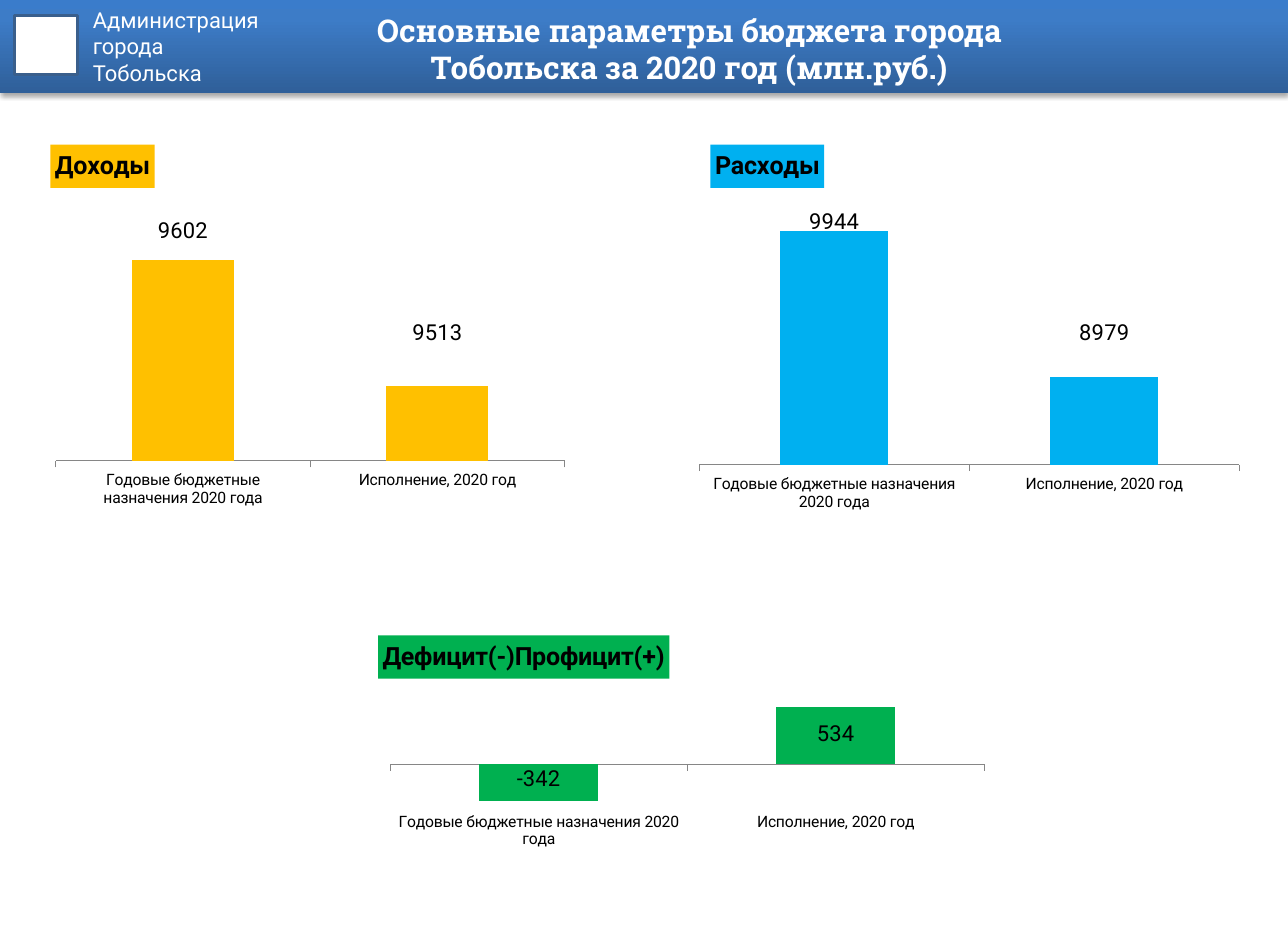
from copy import deepcopy

from lxml.etree import SubElement
from pptx import Presentation
from pptx.chart.data import CategoryChartData
from pptx.dml.color import RGBColor
from pptx.enum.chart import XL_CHART_TYPE, XL_LABEL_POSITION, XL_TICK_LABEL_POSITION, XL_TICK_MARK
from pptx.enum.shapes import MSO_SHAPE
from pptx.enum.text import MSO_ANCHOR, PP_ALIGN
from pptx.oxml import parse_xml
from pptx.oxml.ns import nsdecls, qn
from pptx.util import Cm, Pt

WHITE = RGBColor(0xFF, 0xFF, 0xFF)
BLACK = RGBColor(0, 0, 0)
BAND_STOPS = [(0, RGBColor(0x2F, 0x5F, 0x99)),
              (0.8, RGBColor(0x3D, 0x7C, 0xC7)),
              (1, RGBColor(0x3A, 0x7C, 0xCB))]
EMBLEM_LINE = RGBColor(0x3A, 0x5F, 0x8C)
AXIS_GREY = RGBColor(0x86, 0x86, 0x86)
INCOME_GOLD = RGBColor(0xFF, 0xC0, 0x00)
SPENDING_BLUE = RGBColor(0x00, 0xB0, 0xF0)
BALANCE_GREEN = RGBColor(0x00, 0xB0, 0x50)

PERIODS = ["Годовые бюджетные назначения 2020 года", "Исполнение, 2020 год"]
BAND_SHADOW = (
    f'<a:effectLst {nsdecls("a")}><a:outerShdw blurRad="39370" dist="22860" dir="5400000" '
    'rotWithShape="0"><a:srgbClr val="000000"><a:alpha val="35000"/></a:srgbClr>'
    '</a:outerShdw></a:effectLst>')


def set_font(font, size, color, name="Roboto", bold=False):
    font.size, font.name, font.bold = Pt(size), name, bold
    font.color.rgb = color


def add_text(slide, box, lines, size, name="Roboto", bold=False,
             align=PP_ALIGN.LEFT, anchor=MSO_ANCHOR.TOP):
    frame = slide.shapes.add_textbox(*map(Cm, box)).text_frame
    frame.word_wrap = True
    frame.vertical_anchor = anchor
    frame.margin_left = frame.margin_right = Cm(0.28)
    frame.margin_top = frame.margin_bottom = Cm(0.15)
    frame.text = "\n".join(lines)
    for paragraph in frame.paragraphs:
        paragraph.alignment = align
        set_font(paragraph.runs[0].font, size, WHITE, name, bold)


def add_header(slide, box):
    left, top, width, height = box

    # Gradient band with a soft shadow
    band = slide.shapes.add_shape(MSO_SHAPE.RECTANGLE, *map(Cm, box))
    band.line.fill.background()
    band.fill.gradient()
    band.fill.gradient_angle = 90
    stop_list = band._element.spPr.find(qn("a:gradFill")).find(qn("a:gsLst"))
    stop_list.append(deepcopy(stop_list[-1]))
    for stop, (position, color) in zip(band.fill.gradient_stops, BAND_STOPS):
        stop.position = position
        stop.color.rgb = color
    band._element.spPr.append(parse_xml(BAND_SHADOW))

    # Emblem place
    emblem = slide.shapes.add_shape(MSO_SHAPE.RECTANGLE, Cm(left + 0.33), Cm(top + 0.35),
                                    Cm(1.42), Cm(1.32))
    emblem.shadow.inherit = False
    emblem.fill.solid()
    emblem.fill.fore_color.rgb = WHITE
    emblem.line.color.rgb = EMBLEM_LINE
    emblem.line.width = Pt(2)

    # Administration name and slide title
    add_text(slide, (left + 1.81, top, 6.8, 2.69),
             ["Администрация", "города", "Тобольска"], 14)
    add_text(slide, (left + 6.91, top + 0.1, 17.22, height - 0.12),
             ["Основные параметры бюджета города Тобольска за 2020 год (млн.руб.)"],
             20, "Roboto Slab", True, PP_ALIGN.CENTER, MSO_ANCHOR.MIDDLE)


def place(parent, after, **settings):
    """Put a manual layout into a chart part, right behind the given child."""
    for stale in parent.findall(qn("c:layout")):
        parent.remove(stale)
    layout = parent.makeelement(qn("c:layout"))
    manual = SubElement(layout, qn("c:manualLayout"))
    for tag, value in settings.items():
        SubElement(manual, qn(f"c:{tag}")).set("val", str(value))
    if after is None:
        parent.insert(0, layout)
    else:
        after.addnext(layout)


def add_budget_chart(slide, box, name, values, color, scale, title_at, plot_at, label_shifts):
    data = CategoryChartData()
    data.categories = PERIODS
    data.add_series(name, values)
    chart = slide.shapes.add_chart(XL_CHART_TYPE.COLUMN_STACKED, *map(Cm, box), data).chart
    chart.has_legend = False
    set_font(chart.font, 18, BLACK)

    # Title on a coloured plate
    chart.has_title = True
    title = chart.chart_title
    title.text_frame.text = name
    set_font(title.text_frame.paragraphs[0].runs[0].font, 16, BLACK, bold=True)
    title.format.fill.solid()
    title.format.fill.fore_color.rgb = color
    title_xml = title._element
    place(title_xml, title_xml.find(qn("c:tx")),
          xMode="edge", yMode="edge", x=title_at[0], y=title_at[1])

    # Axes
    periods, amounts = chart.category_axis, chart.value_axis
    periods.major_tick_mark = XL_TICK_MARK.OUTSIDE
    periods.minor_tick_mark = XL_TICK_MARK.NONE
    periods.tick_label_position = XL_TICK_LABEL_POSITION.LOW
    set_font(periods.tick_labels.font, 10, BLACK)
    periods.format.line.color.rgb = AXIS_GREY
    amounts.minimum_scale, amounts.maximum_scale = scale
    amounts.has_major_gridlines = False
    amounts.visible = False

    # Bars
    plot = chart.plots[0]
    plot.gap_width, plot.overlap = 150, 100
    plot.vary_by_categories = False
    bars = plot.series[0]
    bars.invert_if_negative = False
    bars.format.fill.solid()
    bars.format.fill.fore_color.rgb = color
    x, y, w, h = plot_at
    place(chart._chartSpace.chart.plotArea, None, layoutTarget="inner",
          xMode="edge", yMode="edge", x=x, y=y, w=w, h=h)

    # Values, shifted from the inner end of each bar, without leader lines
    for index in range(len(values)):
        label = bars.points[index].data_label
        set_font(label.font, 14, BLACK)
        label.position = XL_LABEL_POSITION.INSIDE_END
    for label_xml, shift in zip(bars._element.iter(qn("c:dLbl")), label_shifts):
        place(label_xml, label_xml.find(qn("c:idx")), x=0, y=shift)
    for leader_lines in bars._element.iter(qn("c:showLeaderLines")):
        leader_lines.set("val", "0")


def main():
    deck = Presentation()
    deck.slide_width, deck.slide_height = Cm(29), Cm(21)
    slide = deck.slides.add_slide(deck.slide_layouts[6])

    add_header(slide, (0, 0, 29, 2.1))
    add_budget_chart(slide, (0.89, 2.9, 12.19, 8.79), "Доходы", (9602, 9513), INCOME_GOLD,
                     (9460, 9620), (0.02, 0.04), (0.03, 0.27, 0.94, 0.58), (-0.12, -0.18))
    add_budget_chart(slide, (15.49, 2.9, 12.67, 8.79), "Расходы", (9944, 8979), SPENDING_BLUE,
                     (8400, 10000), (0.04, 0.04), (0.02, 0.24, 0.96, 0.62), (-0.07, -0.16))
    add_budget_chart(slide, (8.51, 14.3, 13.79, 5), "Дефицит(-)Профицит(+)", (-342, 534),
                     BALANCE_GREEN, (-350, 600), (0, 0), (0.02, 0.29, 0.97, 0.46), (-0.02, 0.04))

    deck.save("out.pptx")


if __name__ == "__main__":
    main()
